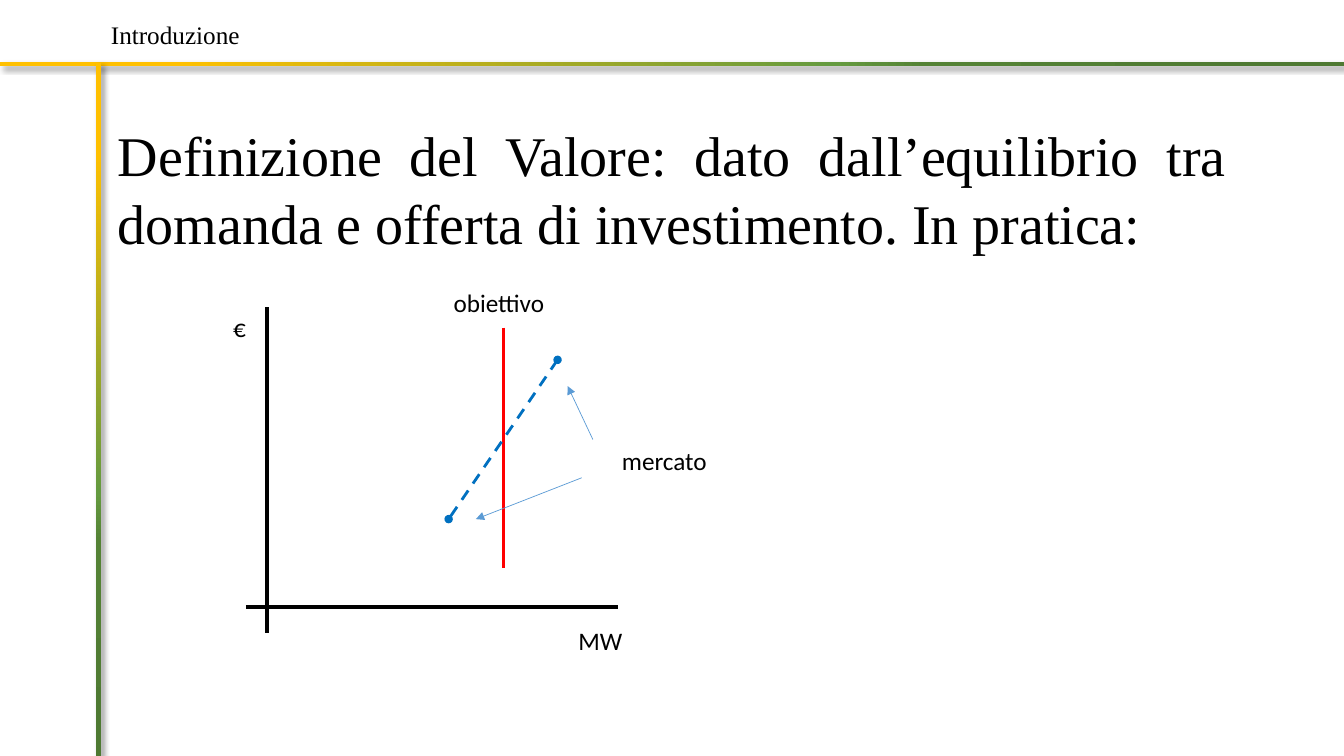
from dataclasses import dataclass

from lxml import etree
from pptx import Presentation
from pptx.dml.color import RGBColor
from pptx.enum.dml import MSO_LINE
from pptx.enum.shapes import MSO_CONNECTOR, MSO_SHAPE
from pptx.enum.text import MSO_ANCHOR, MSO_AUTO_SIZE, PP_ALIGN
from pptx.oxml.ns import qn
from pptx.util import Inches, Pt

STRAIGHT = MSO_CONNECTOR.STRAIGHT
RECTANGLE = MSO_SHAPE.RECTANGLE
DASH = MSO_LINE.DASH
TOP = MSO_ANCHOR.TOP
FIT_TEXT = MSO_AUTO_SIZE.SHAPE_TO_FIT_TEXT
LEFT, CENTER, JUSTIFY = PP_ALIGN.LEFT, PP_ALIGN.CENTER, PP_ALIGN.JUSTIFY


@dataclass(frozen=True)
class Theme:
    ink: str = "000000"
    target: str = "FF0000"
    market: str = "0070C0"
    pointer: str = "5B9BD5"
    band: tuple = ((13, "FFC000"), (62, "649A3F"), (69, "548235"), (97, "4E7932"))
    serif: str = "Times New Roman"
    sans: str = "Calibri"
    small: int = 18
    large: int = 40


THEME = Theme()


def add_node(parent, tag, **attributes):
    node = etree.SubElement(parent, qn(tag))
    for key, value in attributes.items():
        node.set(key, str(value))
    return node


def write(holder, text, font, size, align=LEFT):
    frame = holder.text_frame
    frame.text = text
    frame.word_wrap = True
    frame.auto_size = FIT_TEXT
    frame.vertical_anchor = TOP
    paragraph = frame.paragraphs[0]
    paragraph.alignment = align
    for run in paragraph.runs:
        run.font.name = font
        run.font.size = Pt(size)
        run.font.color.rgb = RGBColor.from_string(THEME.ink)


def add_text(slide, box, text, font, size, align=LEFT):
    holder = slide.shapes.add_textbox(*map(Inches, box))
    write(holder, text, font, size, align)


def add_line(slide, start, end, color, width, head=None, tail=None, dash=None):
    line = slide.shapes.add_connector(STRAIGHT, *map(Inches, (*start, *end)))
    line.line.color.rgb = RGBColor.from_string(color)
    line.line.width = Pt(width)
    if dash:
        line.line.dash_style = dash
    outline = line.line._get_or_add_ln()
    for tag, arrowhead in (("a:headEnd", head), ("a:tailEnd", tail)):
        if arrowhead:
            add_node(outline, tag, type=arrowhead)
    add_node(line._element.spPr, "a:effectLst")


def add_band(slide, box, angle):
    band = slide.shapes.add_shape(RECTANGLE, *map(Inches, box))
    band.line.fill.background()
    band.fill.gradient()
    band.fill.gradient_angle = angle
    stops = band._element.spPr.find(qn("a:gradFill")).find(qn("a:gsLst"))
    for stop in list(stops):
        stops.remove(stop)
    for percent, color in THEME.band:
        stop = add_node(stops, "a:gs", pos=percent * 1000)
        add_node(stop, "a:srgbClr", val=color)
    effects = add_node(band._element.spPr, "a:effectLst")
    shadow = add_node(effects, "a:outerShdw", blurRad=Pt(4), dist=Pt(3),
                      dir=45 * 60000, algn="tl", rotWithShape=0)
    shade = add_node(shadow, "a:srgbClr", val=THEME.ink)
    add_node(shade, "a:alpha", val=40000)


def add_frame(slide, box):
    left, top, width, height = box
    add_band(slide, (left, top, width, 0.04), 0)
    add_band(slide, (left + 0.95, top + 0.01, 0.05, height - 0.01), 270)


def add_header(slide, box):
    title = slide.shapes.title
    title.left, title.top, title.width, title.height = map(Inches, box)
    write(title, "Introduzione", THEME.serif, THEME.small)


def add_definition(slide, box):
    add_text(slide, box,
             "Definizione del Valore: dato dall’equilibrio tra domanda e offerta "
             "di investimento. In pratica:", THEME.serif, THEME.large, JUSTIFY)


def add_market_diagram(slide, box):
    left, top, width, height = box

    def at(x, y):
        return left + x, top + y

    def label(text, x, y, label_width, align=LEFT):
        add_text(slide, (*at(x, y), label_width, 0.4), text,
                 THEME.sans, THEME.small, align)

    axis_x, axis_y = 0.77, height - 0.53
    add_line(slide, at(axis_x, 0.25), at(axis_x, height - 0.27), THEME.ink, 3)
    add_line(slide, at(0.56, axis_y), at(width - 1.31, axis_y), THEME.ink, 3)
    label("€", 0, 0.25, 0.99, CENTER)
    label("MW", 3.58, height - 0.4, 0.99, CENTER)

    target_x = 3.11
    add_line(slide, at(target_x, 0.45), at(target_x, 2.84), THEME.target, 2)
    add_line(slide, at(2.57, 2.35), at(3.65, 0.77), THEME.market, 2,
             head="oval", tail="oval", dash=DASH)
    label("obiettivo", 2.52, 0, 1.37)
    label("mercato", width - 1.37, 1.57, 1.37)
    for start, end in (((4, 1.56), (3.75, 1.03)), ((3.89, 1.94), (2.84, 2.35))):
        add_line(slide, at(*start), at(*end), THEME.pointer, 0.5, tail="triangle")


def main():
    deck = Presentation()
    deck.slide_width, deck.slide_height = Inches(13.33), Inches(7.5)
    slide = deck.slides.add_slide(deck.slide_layouts.get_by_name("Title Only"))
    add_frame(slide, (0, 0.62, 13.33, 6.88))
    add_header(slide, (1, 0.14, 11.19, 0.4))
    add_definition(slide, (1.07, 1.15, 11.19, 1.45))
    add_market_diagram(slide, (1.88, 2.8, 5.56, 3.75))
    deck.save("out.pptx")


if __name__ == "__main__":
    main()
